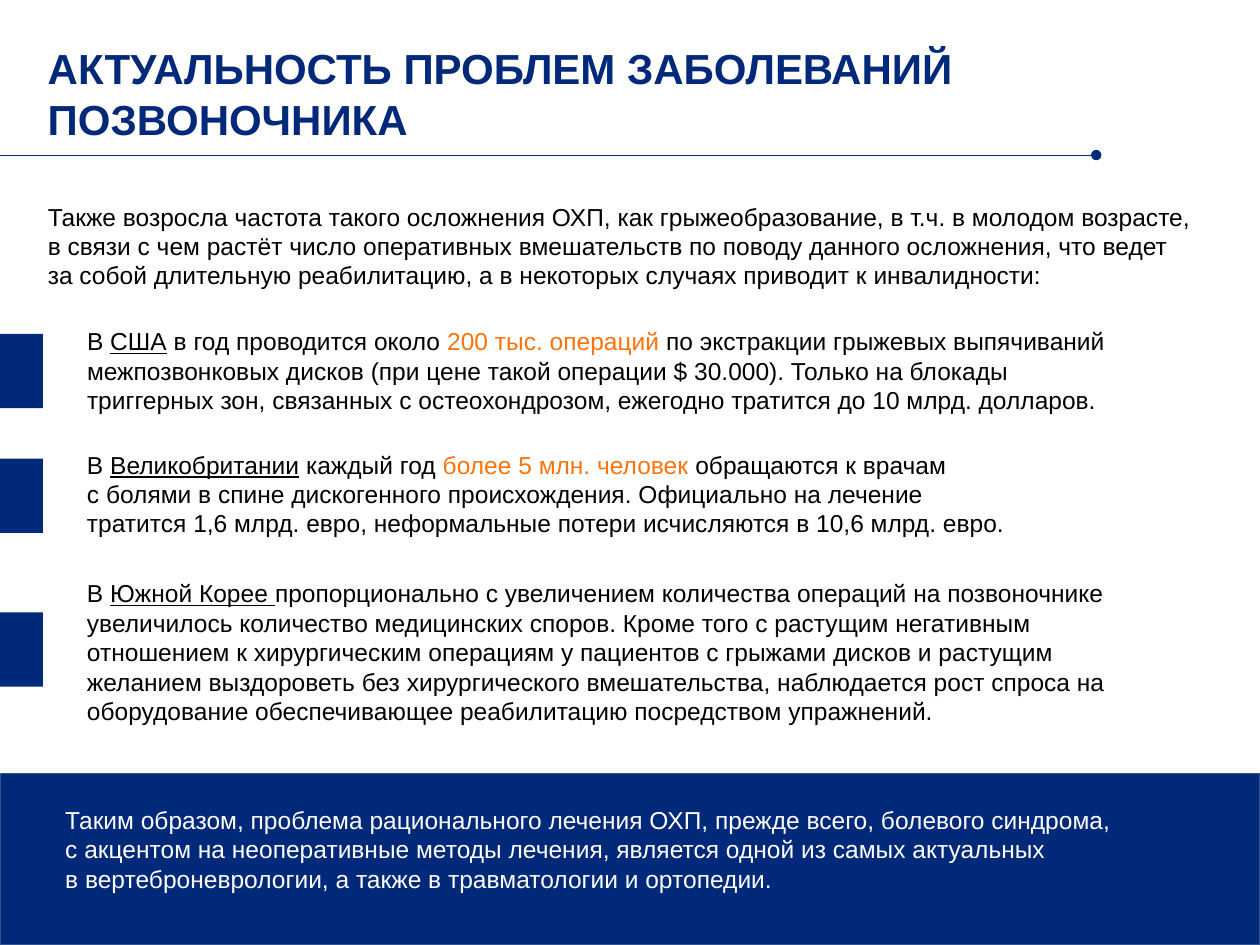
from lxml import etree
from pptx import Presentation
from pptx.dml.color import RGBColor
from pptx.enum.shapes import MSO_CONNECTOR, MSO_SHAPE
from pptx.enum.text import MSO_ANCHOR
from pptx.oxml.ns import qn
from pptx.util import Pt

RECTANGLE = MSO_SHAPE.RECTANGLE
STRAIGHT = MSO_CONNECTOR.STRAIGHT
TOP = MSO_ANCHOR.TOP
MIDDLE = MSO_ANCHOR.MIDDLE

COLORS = {
    "navy": "00297A",
    "border": "325491",
    "orange": "FB730D",
    "black": "000000",
    "white": "FFFFFF",
}
LEFT = 20.2
INSET = 7.2
INDENT = 22.3
BODY_HEIGHT = 58.3


def color(name):
    return RGBColor.from_string(COLORS[name])


def span(text, **style):
    return text, style


class SlideBuilder:
    def __init__(self, slide, font="Arial", size=14):
        self.slide = slide
        self.font = font
        self.size = size

    def text(self, left, top, width, height, spans, indent=0, anchor=TOP, **defaults):
        box = self.slide.shapes.add_textbox(Pt(left), Pt(top), Pt(width), Pt(height))
        frame = box.text_frame
        frame.word_wrap = True
        frame.vertical_anchor = anchor
        frame.margin_left = Pt(INSET + indent)
        para = frame.paragraphs[0]
        for text, style in spans:
            for number, line in enumerate(text.split("\n")):
                if number:
                    para.add_line_break()
                self.run(para, line, **{**defaults, **style})

    def run(self, para, text, fill="black", size=None, bold=False, underline=False):
        run = para.add_run()
        run.text = text
        run.font.name = self.font
        run.font.size = Pt(size or self.size)
        run.font.bold = bold
        run.font.underline = underline
        run.font.color.rgb = color(fill)

    def block(self, left, top, width, height, border=None):
        shape = self.slide.shapes.add_shape(
            RECTANGLE, Pt(left), Pt(top), Pt(width), Pt(height))
        shape.shadow.inherit = False
        shape.fill.solid()
        shape.fill.fore_color.rgb = color("navy")
        if border:
            shape.line.color.rgb = color(border)
            shape.line.width = Pt(1)
        else:
            shape.line.fill.background()

    def dotted_end_line(self, left, right, y):
        line = self.slide.shapes.add_connector(
            STRAIGHT, Pt(left), Pt(y), Pt(right), Pt(y))
        line.line.color.rgb = color("navy")
        line.line.width = Pt(0.5)
        properties = line._element.spPr
        etree.SubElement(properties.find(qn("a:ln")), qn("a:tailEnd"), type="oval")
        etree.SubElement(properties, qn("a:effectLst"))


COUNTRIES = [
    (182.9, 622.8, BODY_HEIGHT, 190.8, [
        span("В "),
        span("США", underline=True),
        span(" в год проводится около "),
        span("200 тыс. операций ", fill="orange"),
        span("по экстракции грыжевых выпячиваний межпозвонковых дисков "
             "(при цене такой операции $ 30.000). Только на блокады триггерных зон, "
             "связанных с остеохондрозом, ежегодно тратится до 10 млрд. долларов."),
    ]),
    (253.4, 566.6, BODY_HEIGHT, 262.1, [
        span("В "),
        span("Великобритании", underline=True),
        span(" каждый год "),
        span("более 5 млн. человек ", fill="orange"),
        span("обращаются к врачам\nс болями в спине дискогенного происхождения. "
             "Официально на лечение тратится 1,6 млрд. евро, "
             "неформальные потери исчисляются в 10,6 млрд. евро."),
    ]),
    (326.9, 628.6, 92.2, 349.9, [
        span("В "),
        span("Южной Корее ", underline=True),
        span("пропорционально с увеличением количества операций на позвоночнике "
             "увеличилось количество медицинских споров. Кроме того с растущим "
             "негативным отношением к хирургическим операциям у пациентов с грыжами "
             "дисков и растущим желанием выздороветь без хирургического "
             "вмешательства, наблюдается рост спроса на оборудование "
             "обеспечивающее реабилитацию посредством упражнений."),
    ]),
]


def main():
    deck = Presentation()
    deck.slide_width = Pt(720)
    deck.slide_height = Pt(540)
    page = SlideBuilder(deck.slides.add_slide(deck.slide_layouts[6]))

    page.text(LEFT, 25.9, 535.7, 54.7,
              [span("АКТУАЛЬНОСТЬ ПРОБЛЕМ ЗАБОЛЕВАНИЙ ПОЗВОНОЧНИКА")],
              anchor=MIDDLE, fill="navy", size=24, bold=True)
    page.dotted_end_line(0, 626.4, 88.6)

    page.text(LEFT, 111.6, 668.9, BODY_HEIGHT, [span(
        "Также возросла частота такого осложнения ОХП, как грыжеобразование, "
        "в т.ч. в молодом возрасте, в связи с чем растёт число оперативных "
        "вмешательств по поводу данного осложнения, что ведет за собой длительную "
        "реабилитацию, а в некоторых случаях приводит к инвалидности:")])

    for top, width, height, marker_top, spans in COUNTRIES:
        page.block(0, marker_top, 24.5, 42.5)
        page.text(LEFT, top, width, height, spans, indent=INDENT)

    page.block(0, 442.1, 720, 97.9, border="border")
    page.text(30.2, 456.5, 648.7, BODY_HEIGHT, [span(
        "Таким образом, проблема рационального лечения ОХП, прежде всего, "
        "болевого синдрома,\nс акцентом на неоперативные методы лечения, "
        "является одной из самых актуальных\nв вертеброневрологии, "
        "а также в травматологии и ортопедии.")], fill="white")

    deck.save("out.pptx")


if __name__ == "__main__":
    main()
